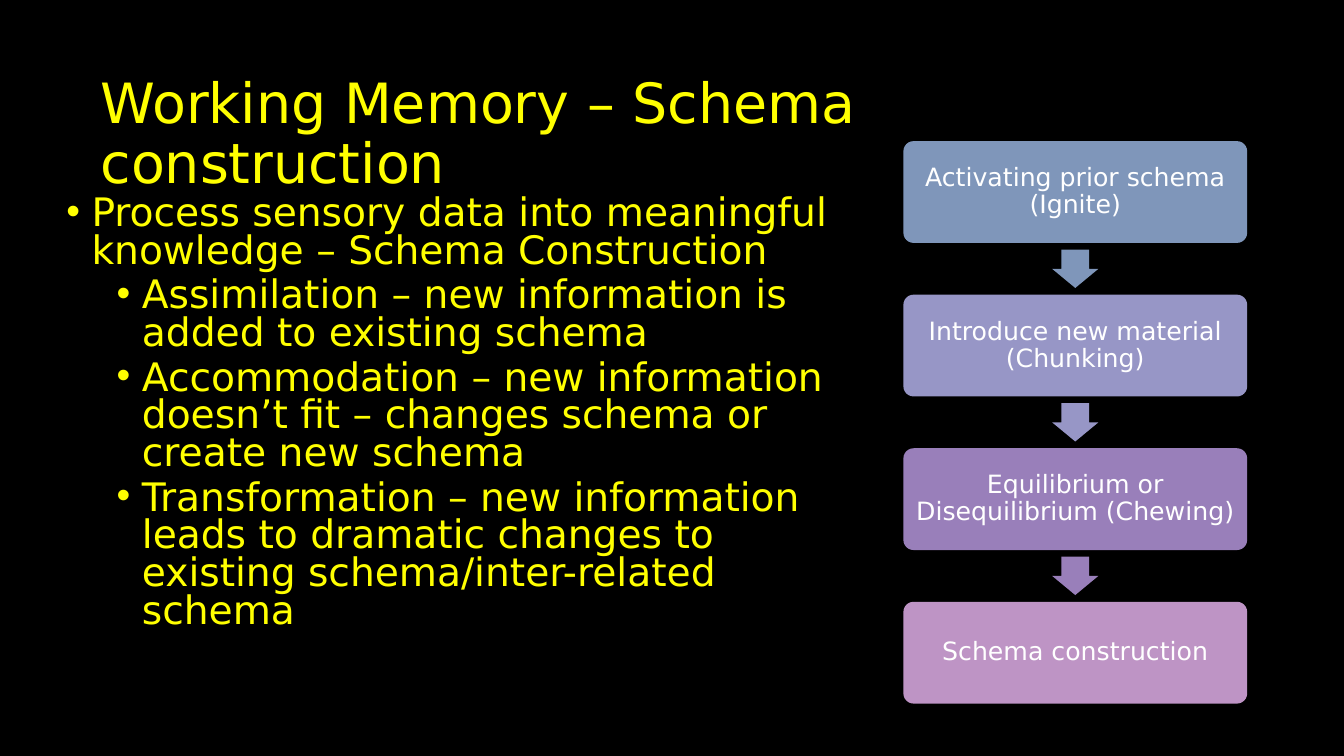
from lxml import etree
from pptx import Presentation
from pptx.dml.color import RGBColor
from pptx.enum.shapes import MSO_SHAPE
from pptx.enum.text import MSO_ANCHOR, PP_ALIGN
from pptx.oxml.ns import qn
from pptx.util import Inches, Pt

ROUNDED = MSO_SHAPE.ROUNDED_RECTANGLE
DOWN_ARROW = MSO_SHAPE.DOWN_ARROW
TOP, MIDDLE = MSO_ANCHOR.TOP, MSO_ANCHOR.MIDDLE
LEFT, CENTER = PP_ALIGN.LEFT, PP_ALIGN.CENTER

# Content
TITLE = "Working Memory – Schema construction"
POINTS = [  # level, text
    (0, "Process sensory data into meaningful knowledge – Schema Construction"),
    (1, "Assimilation – new information is added to existing schema"),
    (1, "Accommodation – new information doesn’t fit – changes schema or create new schema"),
    (1, "Transformation – new information leads to dramatic changes to existing "
        "schema/inter-related schema"),
]
STEPS = [  # text, fill
    ("Activating prior schema (Ignite)", "7F96BA"),
    ("Introduce new material (Chunking)", "9796C6"),
    ("Equilibrium or Disequilibrium (Chewing)", "997FBA"),
    ("Schema construction", "BE94C5"),
]

THEME = {
    "font": "DejaVu Sans",
    "background": "000000", "accent": "FFFF00", "step_text": "FFFFFF",
    "title_size": 39.6, "point_size": 28, "step_size": 18,
}

# Layout, in inches
STEP_LEFT, STEP_WIDTH, STEP_HEIGHT = 8.96, 3.41, 1.01
FIRST_STEP_TOP, LAST_STEP_TOP = 1.4, 5.97
ARROW_WIDTH, ARROW_HEIGHT = 0.46, 0.38
BULLET_HANG = 0.25


def set_frame(frame, anchor, left, top, right, bottom):
    frame.word_wrap = True
    frame.vertical_anchor = anchor
    frame.margin_left, frame.margin_top = Inches(left), Inches(top)
    frame.margin_right, frame.margin_bottom = Inches(right), Inches(bottom)


def write(paragraph, text, size, color, spacing, align=LEFT):
    paragraph.alignment = align
    paragraph.line_spacing = spacing
    run = paragraph.add_run()
    run.text = text
    run.font.name = THEME["font"]
    run.font.size = Pt(THEME[size])
    run.font.color.rgb = RGBColor.from_string(THEME[color])


def add_bullet(paragraph, level):
    paragraph.level = level
    properties = paragraph._p.get_or_add_pPr()
    properties.set("marL", str(Inches(BULLET_HANG + 0.5 * level)))
    properties.set("indent", str(-Inches(BULLET_HANG)))
    etree.SubElement(properties, qn("a:buFont")).set("typeface", "Arial")
    etree.SubElement(properties, qn("a:buChar")).set("char", "•")


def add_filled(slide, preset, left, top, width, height, fill):
    shape = slide.shapes.add_shape(
        preset, Inches(left), Inches(top), Inches(width), Inches(height))
    shape.shadow.inherit = False
    shape.fill.solid()
    shape.fill.fore_color.rgb = RGBColor.from_string(fill)
    shape.line.fill.background()
    return shape


def main():
    deck = Presentation()
    deck.slide_width, deck.slide_height = Inches(13.33), Inches(7.5)
    slide = deck.slides.add_slide(deck.slide_layouts[6])
    slide.background.fill.solid()
    slide.background.fill.fore_color.rgb = RGBColor.from_string(THEME["background"])

    # Title
    title = slide.shapes.add_textbox(
        Inches(0.9), Inches(0.7), Inches(11.2), Inches(0.7)).text_frame
    set_frame(title, TOP, 0.1, 0.05, 0.2, 0.05)
    write(title.paragraphs[0], TITLE, "title_size", "accent", 0.9)

    # Bulleted points
    points = slide.shapes.add_textbox(
        Inches(0.56), Inches(1.39), Inches(8.13), Inches(5.41)).text_frame
    set_frame(points, TOP, 0.1, 0.56, 0.1, 0.05)
    for index, (level, text) in enumerate(POINTS):
        point = points.add_paragraph() if index else points.paragraphs[0]
        add_bullet(point, level)
        if index:
            point.space_before = Pt(5)
        write(point, text, "point_size", "accent", 0.8)

    # Steps, each but the last followed by an arrow
    pitch = (LAST_STEP_TOP - FIRST_STEP_TOP) / (len(STEPS) - 1)
    arrow_left = STEP_LEFT + (STEP_WIDTH - ARROW_WIDTH) / 2
    arrow_offset = (STEP_HEIGHT + pitch - ARROW_HEIGHT) / 2
    for index, (text, fill) in enumerate(STEPS):
        top = FIRST_STEP_TOP + index * pitch
        step = add_filled(slide, ROUNDED, STEP_LEFT, top, STEP_WIDTH, STEP_HEIGHT, fill)
        step.adjustments[0] = 0.1
        set_frame(step.text_frame, MIDDLE, 0.07, 0.07, 0.07, 0.07)
        write(step.text_frame.paragraphs[0], text, "step_size", "step_text", 0.9, CENTER)
        if index < len(STEPS) - 1:
            arrow = add_filled(slide, DOWN_ARROW, arrow_left, top + arrow_offset,
                               ARROW_WIDTH, ARROW_HEIGHT, fill)
            arrow.adjustments[0], arrow.adjustments[1] = 0.6, 0.5

    deck.save("out.pptx")


if __name__ == "__main__":
    main()
